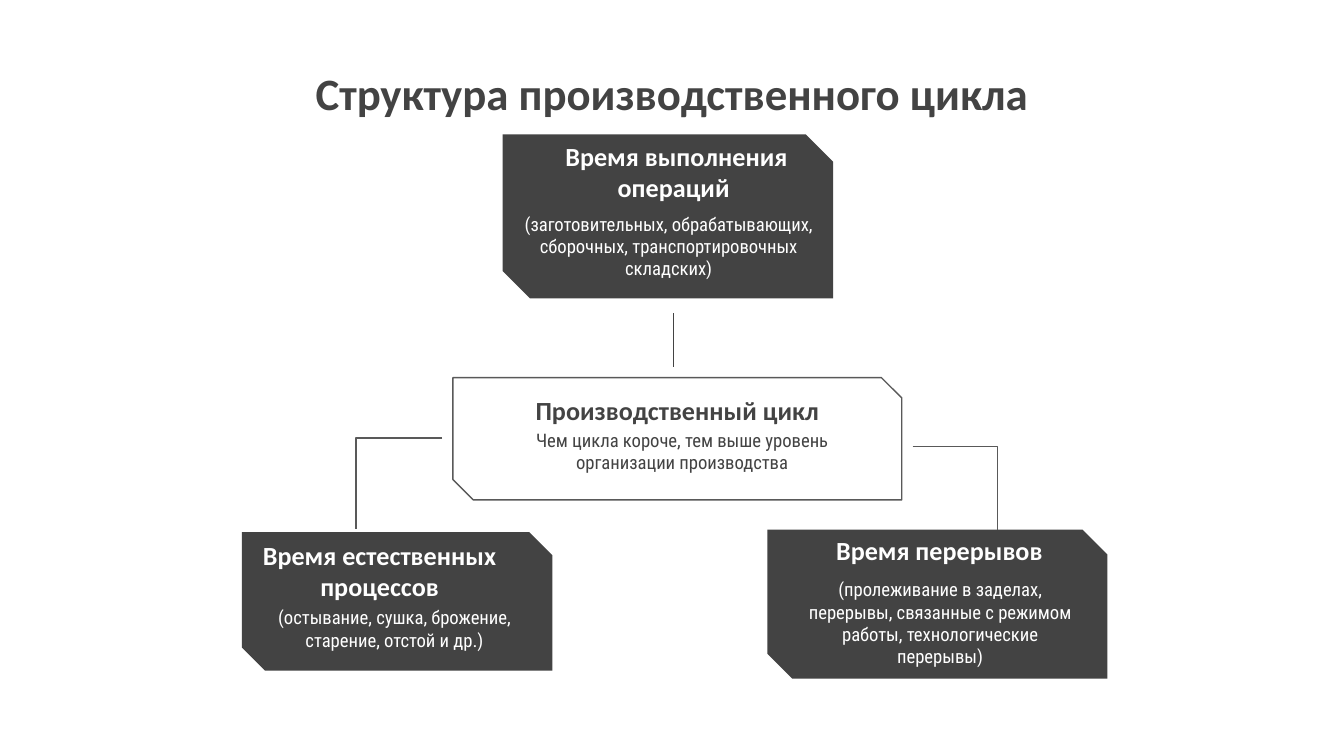
from lxml.etree import SubElement
from pptx import Presentation
from pptx.dml.color import RGBColor
from pptx.enum.shapes import MSO_CONNECTOR, MSO_SHAPE
from pptx.enum.text import MSO_ANCHOR, MSO_AUTO_SIZE, PP_ALIGN
from pptx.oxml.ns import qn
from pptx.util import Inches, Pt

THEME = {
    "dark": RGBColor(0x43, 0x43, 0x43),
    "outline": RGBColor(0x59, 0x59, 0x59),
    "white": RGBColor(0xFF, 0xFF, 0xFF),
    "heading_font": "Calibri",
    "body_font": "Roboto Condensed",
    "title_size": 24,
    "heading_size": 14,
    "body_size": 10,
    "line_width": 0.75,
    "inset": 0.1,
}

TITLE = ("Структура производственного цикла", (2.15, 0.39, 5.7, 1.03))

CARDS = [
    {
        "box": (1.8, 3.96, 2.31, 1.03), "filled": True,
        "heading": ("Время естественных процессов", (1.56, 4.15, 2.53, 0.43)),
        "body": ("(остывание, сушка, брожение, старение, отстой и др.)",
                 (1.8, 4.41, 2.27, 0.68)),
    },
    {
        "box": (5.71, 3.94, 2.53, 1.11), "filled": True,
        "heading": ("Время перерывов", (5.88, 3.88, 2.22, 0.43)),
        "body": ("(пролеживание в заделах, перерывы, связанные с режимом работы, "
                 "технологические перерывы)", (5.86, 4.2, 2.27, 0.68)),
    },
    {
        "box": (3.37, 2.81, 3.34, 0.91), "filled": False,
        "heading": ("Производственный цикл", (3.87, 2.84, 2.34, 0.43)),
        "body": ("Чем цикла короче, тем выше уровень организации производства",
                 (3.56, 3.09, 3.03, 0.9)),
    },
    {
        "box": (3.74, 1, 2.46, 1.22), "filled": True,
        "heading": ("Время выполнения операций ", (4.07, 1.18, 1.93, 0.43)),
        "body": ("(заготовительных, обрабатывающих, сборочных, транспортировочных "
                 "складских)", (3.74, 1.48, 2.47, 0.68)),
    },
]

LINKS = [
    (MSO_CONNECTOR.STRAIGHT, (5.01, 2.33, 5.01, 2.73), "dark"),
    (MSO_CONNECTOR.ELBOW, (3.29, 3.26, 2.65, 3.94), "outline"),
    (MSO_CONNECTOR.ELBOW, (6.79, 3.32, 7.42, 3.94), "outline"),
]


def inches(values):
    return [Inches(value) for value in values]


def write_text(shape, text, *, font, size, color, bold=False, anchor=MSO_ANCHOR.TOP):
    frame = shape.text_frame
    frame.word_wrap = True
    frame.auto_size = MSO_AUTO_SIZE.NONE
    frame.vertical_anchor = anchor
    frame.margin_left = frame.margin_right = Inches(THEME["inset"])
    frame.margin_top = frame.margin_bottom = Inches(THEME["inset"])
    paragraph = frame.paragraphs[0]
    paragraph.alignment = PP_ALIGN.CENTER
    run = paragraph.add_run()
    run.text = text
    run.font.name = font
    run.font.size = Pt(size)
    run.font.bold = bold
    run.font.color.rgb = color


def add_title(slide):
    text, box = TITLE
    title = slide.shapes.title
    title.left, title.top, title.width, title.height = inches(box)
    write_text(title, text, font=THEME["heading_font"], size=THEME["title_size"],
               color=THEME["dark"], bold=True)


def add_card(slide, card):
    shape = slide.shapes.add_shape(MSO_SHAPE.SNIP_2_DIAG_RECTANGLE, *inches(card["box"]))
    shape.shadow.inherit = False
    shape.adjustments[0] = 0
    shape.adjustments[1] = 0.167
    if card["filled"]:
        shape.fill.solid()
        shape.fill.fore_color.rgb = THEME["dark"]
        shape.line.fill.background()
    else:
        shape.fill.background()
        shape.line.color.rgb = THEME["outline"]
        shape.line.width = Pt(THEME["line_width"])

    color = THEME["white"] if card["filled"] else THEME["dark"]
    heading, heading_box = card["heading"]
    write_text(slide.shapes.add_textbox(*inches(heading_box)), heading,
               font=THEME["heading_font"], size=THEME["heading_size"],
               color=color, bold=True, anchor=MSO_ANCHOR.BOTTOM)
    body, body_box = card["body"]
    write_text(slide.shapes.add_textbox(*inches(body_box)), body,
               font=THEME["body_font"], size=THEME["body_size"], color=color)


def add_link(slide, kind, ends, color):
    connector = slide.shapes.add_connector(kind, *inches(ends))
    connector.line.color.rgb = THEME[color]
    connector.line.width = Pt(THEME["line_width"])
    properties = connector._element.spPr
    SubElement(properties, qn("a:effectLst"))
    if kind == MSO_CONNECTOR.ELBOW:
        adjustments = properties.find(qn("a:prstGeom")).find(qn("a:avLst"))
        SubElement(adjustments, qn("a:gd"), name="adj1", fmla="val 100000")


def main():
    presentation = Presentation()
    presentation.slide_width = Inches(10)
    presentation.slide_height = presentation.slide_width * 9 // 16
    slide = presentation.slides.add_slide(presentation.slide_layouts[5])
    add_title(slide)
    for card in CARDS:
        add_card(slide, card)
    for link in LINKS:
        add_link(slide, *link)
    presentation.save("out.pptx")


if __name__ == "__main__":
    main()
